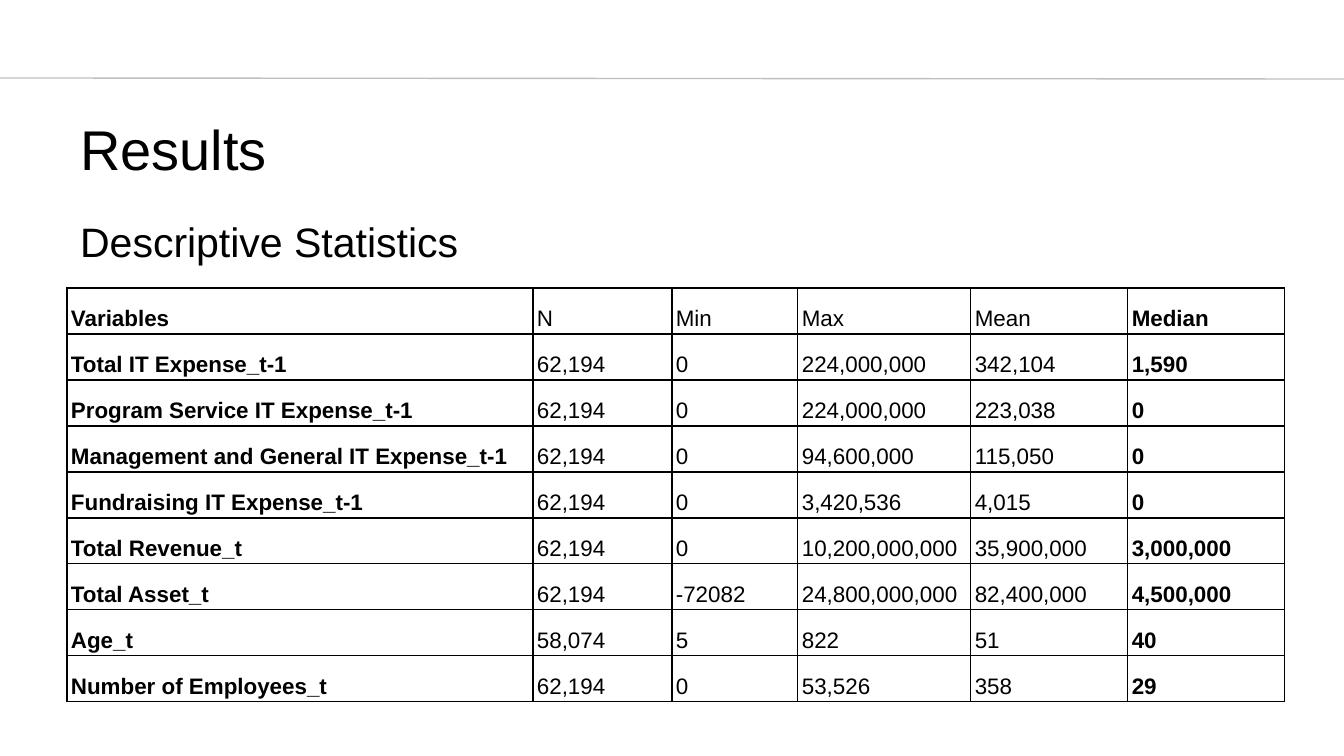
import pptx
import pptx.util
import pptx.dml.color
import pptx.enum.shapes
import pptx.enum.text
import pptx.oxml
import pptx.oxml.ns

# Content
TITLE = "Results"
SUBTITLE = "Descriptive Statistics"
STATISTICS = [
    ("Variables", "N", "Min", "Max", "Mean", "Median"),
    ("Total IT Expense_t-1", "62,194", "0", "224,000,000", "342,104", "1,590"),
    ("Program Service IT Expense_t-1", "62,194", "0", "224,000,000", "223,038", "0"),
    ("Management and General IT Expense_t-1", "62,194", "0", "94,600,000", "115,050", "0"),
    ("Fundraising IT Expense_t-1", "62,194", "0", "3,420,536", "4,015", "0"),
    ("Total Revenue_t", "62,194", "0", "10,200,000,000", "35,900,000", "3,000,000"),
    ("Total Asset_t", "62,194", "-72082", "24,800,000,000", "82,400,000", "4,500,000"),
    ("Age_t", "58,074", "5", "822", "51", "40"),
    ("Number of Employees_t", "62,194", "0", "53,526", "358", "29"),
]
BOLD_COLUMNS = (0, 5)

# Layout in px
COLUMN_WIDTHS = [466, 139, 126, 173, 157, 157]
ROW_HEIGHT = 46
TABLE_LEFT, TABLE_TOP = 67, 288
COLORS = {"text": "000000", "border": "000000", "rule": "BFBFBF"}
FONT = "Arial"
ANCHOR = pptx.enum.text.MSO_ANCHOR


def px(n):
    return round(n * 914400 / 134.4)


def rgb(name):
    return pptx.dml.color.RGBColor.from_string(COLORS[name])


def style_text(p, size, bold=False):
    for r in p.runs:
        r.font.name = FONT
        r.font.size = pptx.util.Pt(size)
        r.font.bold = bold
        r.font.color.rgb = rgb("text")


def add_text(slide, text, top, height, size, anchor):
    sp = slide.shapes.add_textbox(px(67), px(top), px(1210), px(height))
    tf = sp.text_frame
    tf.word_wrap = True
    tf.vertical_anchor = anchor
    tf.text = text
    style_text(tf.paragraphs[0], size)


def set_borders(cell):
    tcPr = cell._tc.get_or_add_tcPr()
    for i, side in enumerate(("lnL", "lnR", "lnT", "lnB")):
        ln = pptx.oxml.parse_xml(
            f'<a:{side} {pptx.oxml.ns.nsdecls("a")} w="9525"><a:solidFill>'
            f'<a:srgbClr val="{COLORS["border"]}"/></a:solidFill></a:{side}>')
        tcPr.insert(i, ln)


prs = pptx.Presentation()
prs.slide_width, prs.slide_height = px(1344), px(756)
slide = prs.slides.add_slide(prs.slide_layouts[6])

# Header rule
rule = slide.shapes.add_connector(
    pptx.enum.shapes.MSO_CONNECTOR.STRAIGHT, 0, px(78), px(1344), px(79))
rule.line.color.rgb = rgb("rule")
rule.line.width = pptx.util.Pt(0.75)
rule._element.spPr.append(
    pptx.oxml.parse_xml(f'<a:effectLst {pptx.oxml.ns.nsdecls("a")}/>'))

# Headings
add_text(slide, TITLE, 104, 88, 30, ANCHOR.MIDDLE)
add_text(slide, SUBTITLE, 210, 66, 22, ANCHOR.TOP)

# Statistics table
table = slide.shapes.add_table(
    len(STATISTICS), len(COLUMN_WIDTHS), px(TABLE_LEFT), px(TABLE_TOP),
    px(sum(COLUMN_WIDTHS)), px(ROW_HEIGHT * len(STATISTICS))).table
table.first_row = table.horz_banding = False
for column, width in zip(table.columns, COLUMN_WIDTHS):
    column.width = px(width)
for row, values in zip(table.rows, STATISTICS):
    row.height = px(ROW_HEIGHT)
    for c, (cell, value) in enumerate(zip(row.cells, values)):
        cell.fill.background()
        set_borders(cell)
        cell.margin_left = cell.margin_right = px(4)
        cell.margin_top = cell.margin_bottom = px(3)
        cell.vertical_anchor = ANCHOR.BOTTOM
        cell.text_frame.text = value
        p = cell.text_frame.paragraphs[0]
        p.line_spacing = 1.15
        style_text(p, 12, c in BOLD_COLUMNS)

prs.save("out.pptx")
